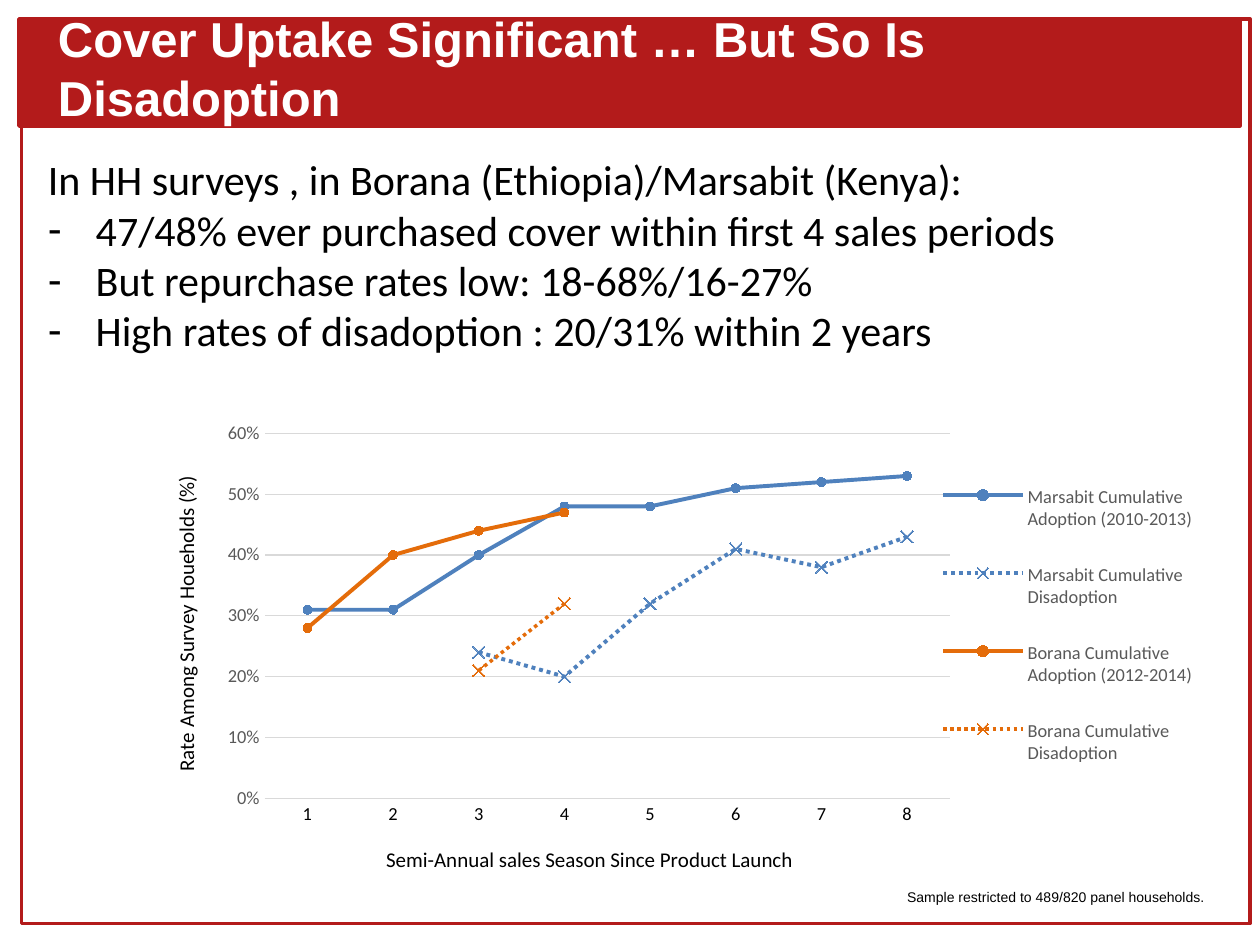
from lxml import etree
from pptx import Presentation
from pptx.chart.data import CategoryChartData
from pptx.dml.color import RGBColor
from pptx.enum.chart import XL_CHART_TYPE, XL_LEGEND_POSITION, XL_MARKER_STYLE, XL_TICK_MARK
from pptx.enum.dml import MSO_LINE
from pptx.enum.shapes import MSO_SHAPE
from pptx.enum.text import MSO_ANCHOR, PP_ALIGN
from pptx.oxml import parse_xml
from pptx.oxml.ns import qn
from pptx.util import Inches, Pt

LINE_MARKERS = XL_CHART_TYPE.LINE_MARKERS
LEGEND_RIGHT = XL_LEGEND_POSITION.RIGHT
CIRCLE, CROSS = XL_MARKER_STYLE.CIRCLE, XL_MARKER_STYLE.X
NO_TICK = XL_TICK_MARK.NONE
DOTTED = MSO_LINE.ROUND_DOT
RECTANGLE = MSO_SHAPE.RECTANGLE
TOP, MIDDLE = MSO_ANCHOR.TOP, MSO_ANCHOR.MIDDLE
LEFT = PP_ALIGN.LEFT

COLORS = {"red": "B31B1B", "white": "FFFFFF", "black": "000000", "gray": "595959",
          "grid": "D9D9D9", "marsabit": "4F81BD", "borana": "E46C0A"}

TITLE = "Cover Uptake Significant … But So Is Disadoption"
INTRO = "In HH surveys , in Borana (Ethiopia)/Marsabit (Kenya):"
FINDINGS = ["47/48% ever purchased cover within first 4 sales periods",
            "But repurchase rates low: 18-68%/16-27%",
            "High rates of disadoption : 20/31% within 2 years"]
FOOTNOTE = "Sample restricted to 489/820 panel households."
SEASON_TITLE = "Semi-Annual sales Season Since Product Launch"
RATE_TITLE = "Rate Among Survey Houeholds (%)"
SEASONS = [str(number) for number in range(1, 9)]
SERIES = [
    ("Marsabit Cumulative Adoption (2010-2013)", "marsabit", False, 2.25,
     [0.31, 0.31, 0.4, 0.48, 0.48, 0.51, 0.52, 0.53]),
    ("Marsabit Cumulative Disadoption", "marsabit", True, 2.25,
     [None, None, 0.24, 0.2, 0.32, 0.41, 0.38, 0.43]),
    ("Borana Cumulative Adoption (2012-2014)", "borana", False, 2.25,
     [0.28, 0.4, 0.44, 0.47, None, None, None, None]),
    ("Borana Cumulative Disadoption", "borana", True, 2,
     [None, None, 0.21, 0.32, None, None, None, None]),
]


def rgb(name):
    return RGBColor.from_string(COLORS[name])


def style_font(font, size, color, face="Calibri", bold=False):
    font.size, font.name, font.bold = Pt(size), face, bold
    font.color.rgb = rgb(color)


def place(shape, left, top, width, height):
    shape.left, shape.top = Inches(left), Inches(top)
    shape.width, shape.height = Inches(width), Inches(height)


def add_panel(page, depth, fill, *box):
    panel = page.shapes.add_shape(RECTANGLE, *map(Inches, box))
    panel.shadow.inherit = False
    panel.fill.solid()
    panel.fill.fore_color.rgb = rgb(fill)
    panel.line.color.rgb = rgb("red")
    panel.line.width = Pt(2)
    page.shapes._spTree.insert(2 + depth, panel._element)


def set_layout(parent, after, inner=False, **shares):
    for old in parent.findall(qn("c:layout")):
        parent.remove(old)
    layout = parse_xml('<c:layout xmlns:c="http://schemas.openxmlformats.org/'
                       'drawingml/2006/chart"><c:manualLayout/></c:layout>')
    settings = [("layoutTarget", "inner")] if inner else []
    settings += [("xMode", "edge"), ("yMode", "edge"), *shares.items()]
    for tag, value in settings:
        etree.SubElement(layout[0], qn(f"c:{tag}")).set("val", str(value))
    if after is None:
        parent.insert(0, layout)
    else:
        parent.find(qn(after)).addnext(layout)


def fill_body(body):
    frame = body.text_frame
    frame.text = "\n".join([INTRO, *FINDINGS])
    frame.vertical_anchor = TOP
    for index, paragraph in enumerate(frame.paragraphs):
        paragraph.space_before = Pt(0)
        style_font(paragraph.runs[0].font, 24, "black")
        properties = paragraph._p.get_or_add_pPr()
        indent = Inches(0.38) if index else 0
        properties.set("marL", str(indent))
        properties.set("indent", str(-indent))
        if index:
            etree.SubElement(properties, qn("a:buChar")).set("char", "-")
        else:
            etree.SubElement(properties, qn("a:buNone"))


def style_axis(axis, title, color, x, y):
    axis.major_tick_mark = axis.minor_tick_mark = NO_TICK
    style_font(axis.tick_labels.font, 10.5, color)
    frame = axis.axis_title.text_frame
    frame.text = title
    style_font(frame.paragraphs[0].runs[0].font, 12, "black")
    set_layout(axis.axis_title._element, "c:tx", x=x, y=y)


def add_rates_chart(page, *box):
    data = CategoryChartData(number_format="0%")
    data.categories = SEASONS
    for name, _, _, _, rates in SERIES:
        data.add_series(name, rates)
    chart = page.shapes.add_chart(LINE_MARKERS, *map(Inches, box), data).chart
    style_font(chart.font, 10, "black")
    chart.has_title = False

    chart.has_legend = True
    chart.legend.position = LEGEND_RIGHT
    chart.legend.include_in_layout = False
    style_font(chart.legend.font, 10.5, "gray")
    set_layout(chart.legend._element, "c:legendPos", x=0.75, y=0.09, w=0.24, h=0.72)

    seasons, rates = chart.category_axis, chart.value_axis
    style_axis(seasons, SEASON_TITLE, "black", 0.23, 0.9)
    seasons.format.line.color.rgb = rgb("grid")
    seasons.format.line.width = Pt(0.75)
    style_axis(rates, RATE_TITLE, "gray", 0.03, 0.13)
    rates.axis_title.text_frame._txBody.bodyPr.set("rot", "-5400000")
    rates.format.line.fill.background()
    rates.minimum_scale, rates.maximum_scale, rates.major_unit = 0, 0.6, 0.1
    rates.tick_labels.number_format = "0%"
    rates.tick_labels.number_format_is_linked = False
    rates.major_gridlines.format.line.color.rgb = rgb("grid")
    rates.major_gridlines.format.line.width = Pt(0.75)

    for series, (_, color, dotted, width, _) in zip(chart.plots[0].series, SERIES):
        series.smooth = False
        series.format.line.color.rgb = rgb(color)
        series.format.line.width = Pt(width)
        marker = series.marker
        marker.style, marker.size = (CROSS, 7) if dotted else (CIRCLE, 5)
        marker.format.line.color.rgb = rgb(color)
        if dotted:
            series.format.line.dash_style = DOTTED
            marker.format.fill.background()
        else:
            marker.format.fill.solid()
            marker.format.fill.fore_color.rgb = rgb(color)
    set_layout(chart._chartSpace.chart.plotArea, None, inner=True,
               x=0.12, y=0.05, w=0.64, h=0.76)


def main():
    deck = Presentation()
    deck.slide_width, deck.slide_height = Inches(10), Inches(7.5)
    page = deck.slides.add_slide(deck.slide_layouts[1])
    add_panel(page, 0, "white", 0.17, 0.15, 9.75, 7.18)
    add_panel(page, 1, "red", 0.15, 0.15, 9.69, 0.85)

    title, body = page.placeholders
    place(title, 0.36, 0.25, 9.39, 0.57)
    title.text_frame.text = TITLE
    title.text_frame.vertical_anchor = MIDDLE
    heading = title.text_frame.paragraphs[0]
    heading.alignment = LEFT
    style_font(heading.runs[0].font, 28, "white", "Arial", True)

    place(body, 0.28, 1.17, 8.58, 1.72)
    fill_body(body)
    add_rates_chart(page, 1.08, 3.25, 8.5, 3.81)

    note = page.shapes.add_textbox(*map(Inches, (7.1, 7, 2.65, 0.24))).text_frame
    note.word_wrap = False
    note.text = FOOTNOTE
    style_font(note.paragraphs[0].runs[0].font, 8, "black", "Arial")
    deck.save("out.pptx")


if __name__ == "__main__":
    main()
